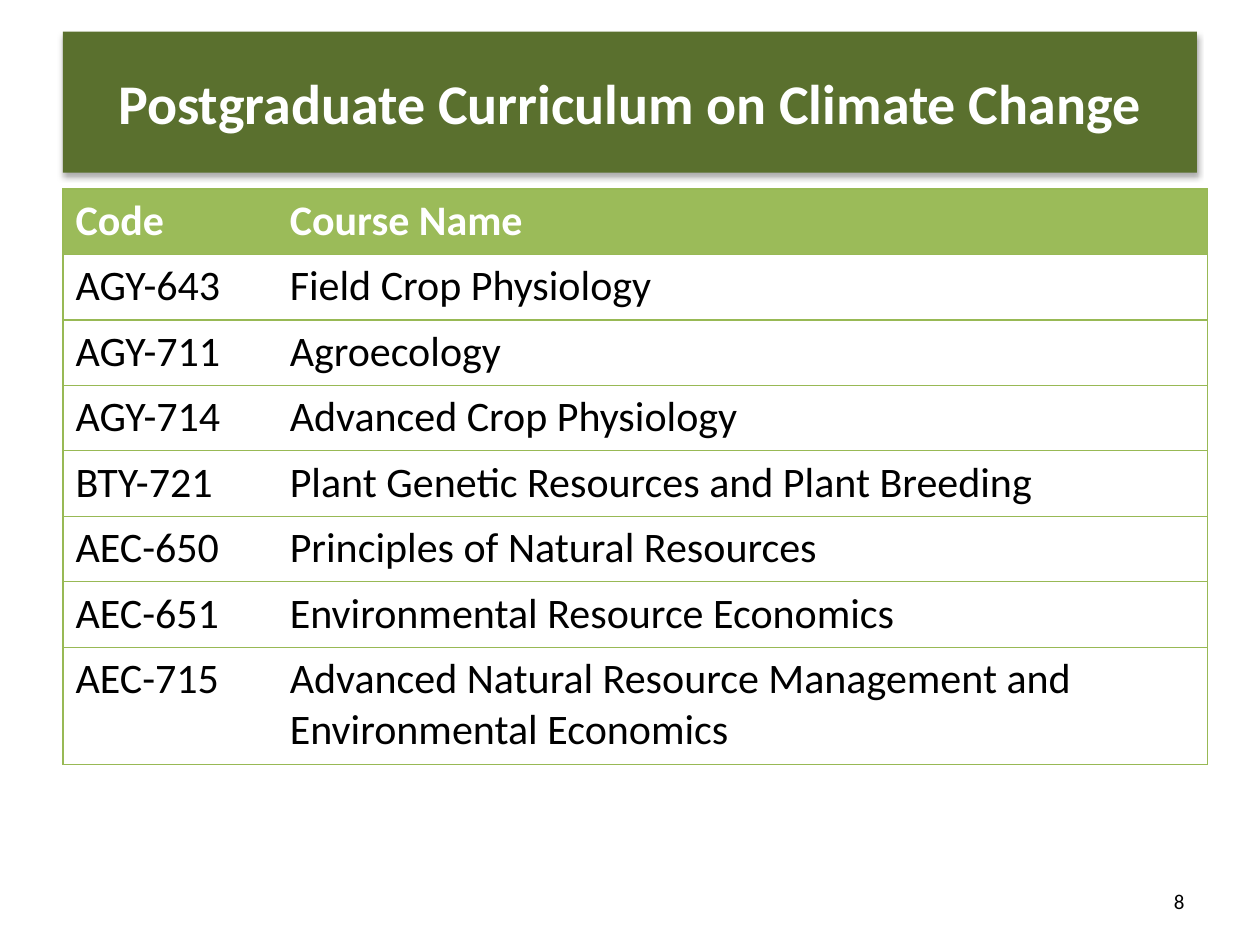
from typing import NamedTuple

from lxml import etree
from pptx import Presentation
from pptx.dml.color import RGBColor
from pptx.enum.shapes import MSO_SHAPE
from pptx.enum.text import MSO_ANCHOR, PP_ALIGN
from pptx.oxml.ns import qn
from pptx.util import Inches, Pt

RECTANGLE = MSO_SHAPE.RECTANGLE
MIDDLE = MSO_ANCHOR.MIDDLE
LEFT, CENTER, RIGHT = PP_ALIGN.LEFT, PP_ALIGN.CENTER, PP_ALIGN.RIGHT

WHITE = RGBColor(0xFF, 0xFF, 0xFF)
BLACK = RGBColor(0x00, 0x00, 0x00)
DARK_GREEN = RGBColor(0x5A, 0x70, 0x2E)
HEADER_GREEN = RGBColor(0x9B, 0xBB, 0x59)
BORDER_GREEN = RGBColor(0x98, 0xB9, 0x55)

FONT = "Calibri"
PLAIN_TABLE_STYLE = "{2D5ABB26-0587-4C30-8999-92F81FD0307C}"
COLUMN_WIDTHS = (1.7, 7.38)
ROW_HEIGHT = 0.52
LAST_ROW_HEIGHT = 0.93


class Course(NamedTuple):
    code: str
    name: str


HEADER = Course("Code", "Course Name")
COURSES = [
    Course("AGY-643", "Field Crop Physiology"),
    Course("AGY-711", "Agroecology"),
    Course("AGY-714", "Advanced Crop Physiology"),
    Course("BTY-721", "Plant Genetic Resources and Plant Breeding"),
    Course("AEC-650", "Principles of Natural Resources"),
    Course("AEC-651", "Environmental Resource Economics"),
    Course("AEC-715", "Advanced Natural Resource Management and Environmental Economics"),
]


def write_text(text_frame, text: str, *, size: float, color: RGBColor = BLACK,
               bold: bool = False, align=LEFT) -> None:
    text_frame.word_wrap = True
    paragraph = text_frame.paragraphs[0]
    paragraph.alignment = align
    run = paragraph.add_run()
    run.text = text
    run.font.name = FONT
    run.font.size = Pt(size)
    run.font.bold = bold
    run.font.color.rgb = color


def add_soft_shadow(shape) -> None:
    """Give the shape a faint shadow that falls straight down."""
    shape.shadow.inherit = False
    effects = shape._element.spPr.find(qn("a:effectLst"))
    shadow = etree.SubElement(effects, qn("a:outerShdw"), blurRad=str(Pt(3.5)),
                              dist=str(Pt(2.2)), dir="5400000", rotWithShape="0")
    color = etree.SubElement(shadow, qn("a:srgbClr"), val=str(BLACK))
    etree.SubElement(color, qn("a:alpha"), val="32000")


def add_borders(cell, sides: str) -> None:
    """Draw the borders named by letters, in the order L, R, T, B."""
    properties = cell._tc.get_or_add_tcPr()
    for side in sides:
        line = etree.SubElement(properties, qn(f"a:ln{side}"), w=str(Pt(0.75)))
        fill = etree.SubElement(line, qn("a:solidFill"))
        etree.SubElement(fill, qn("a:srgbClr"), val=str(BORDER_GREEN))


def add_title(slide) -> None:
    banner = slide.shapes.add_shape(RECTANGLE, Inches(0.5), Inches(0.25),
                                    Inches(9), Inches(1.12))
    banner.fill.solid()
    banner.fill.fore_color.rgb = DARK_GREEN
    banner.line.fill.background()
    add_soft_shadow(banner)
    banner.text_frame.vertical_anchor = MIDDLE
    write_text(banner.text_frame, "Postgraduate Curriculum on Climate Change",
               size=32, color=WHITE, bold=True, align=CENTER)


def add_course_table(slide) -> None:
    rows = [HEADER, *COURSES]
    heights = [ROW_HEIGHT] * len(COURSES) + [LAST_ROW_HEIGHT]
    table = slide.shapes.add_table(
        len(rows), len(COLUMN_WIDTHS), Inches(0.5), Inches(1.5),
        Inches(sum(COLUMN_WIDTHS)), Inches(sum(heights))).table
    table._tbl.tblPr.find(qn("a:tableStyleId")).text = PLAIN_TABLE_STYLE
    table.horz_banding = False
    for column, width in zip(table.columns, COLUMN_WIDTHS):
        column.width = Inches(width)
    for row_index, (course, height) in enumerate(zip(rows, heights)):
        is_header = row_index == 0
        table.rows[row_index].height = Inches(height)
        for column_index, text in enumerate(course):
            cell = table.cell(row_index, column_index)
            add_borders(cell, ("L", "R")[column_index] + "TB")
            if is_header:
                cell.fill.solid()
                cell.fill.fore_color.rgb = HEADER_GREEN
            else:
                cell.fill.background()
            write_text(cell.text_frame, text, size=24, bold=is_header,
                       color=WHITE if is_header else BLACK)


def add_page_number(slide) -> None:
    box = slide.shapes.add_textbox(Inches(7.17), Inches(6.95), Inches(2.33), Inches(0.4))
    box.text_frame.vertical_anchor = MIDDLE
    write_text(box.text_frame, "8", size=12, align=RIGHT)


def main() -> None:
    presentation = Presentation()
    presentation.slide_width = Inches(10)
    presentation.slide_height = Inches(7.5)
    slide = presentation.slides.add_slide(presentation.slide_layouts[6])
    add_course_table(slide)
    add_page_number(slide)
    add_title(slide)
    presentation.save("out.pptx")


if __name__ == "__main__":
    main()
